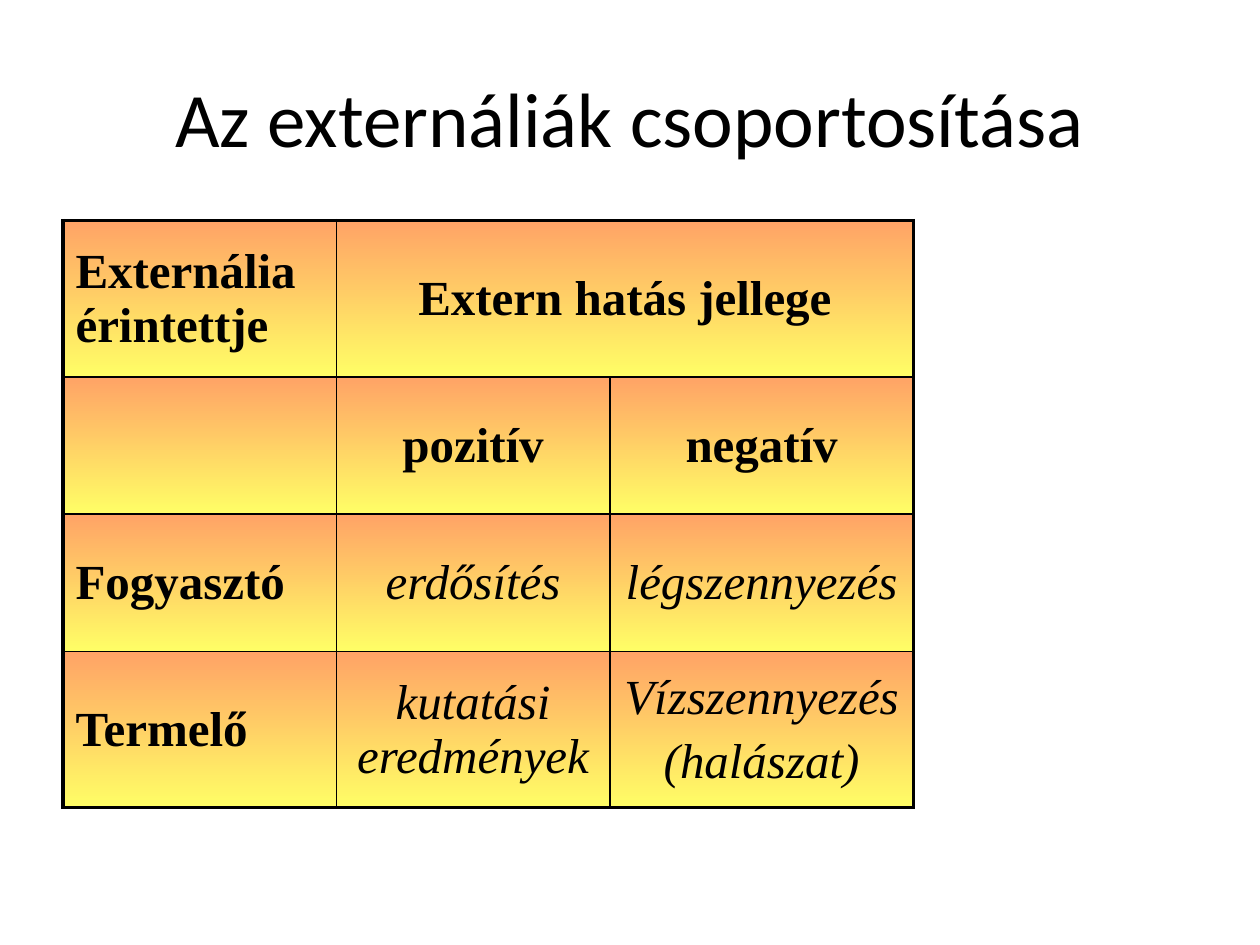
from lxml import etree
from pptx import Presentation
from pptx.dml.color import RGBColor
from pptx.enum import text
from pptx.oxml import ns
from pptx.util import Pt

TITLE = "Az externáliák csoportosítása"
ROWS = [
    ["Externália érintettje", "Extern hatás jellege", ""],
    ["", "pozitív", "negatív"],
    ["Fogyasztó", "erdősítés", "légszennyezés"],
    ["Termelő", "kutatási eredmények", "Vízszennyezés\n(halászat)"],
]
COL_WIDTHS = [156.24, 156.24, 173.52]
ROW_HEIGHTS = [89.3, 78.5, 78.5, 89.3]
COLORS = {"ink": "000000", "top": "FF6600", "bottom": "FFFF00"}
OUTER, INNER = 2.25, 1
OPACITY = 60


def add(parent, tag, **attrs):
    return etree.SubElement(parent, ns.qn(tag), {k: str(v) for k, v in attrs.items()})


def add_border(props, side, width):
    line = add(props, f"a:ln{side}", w=Pt(width))
    add(add(line, "a:solidFill"), "a:srgbClr", val=COLORS["ink"])


def add_gradient(props):
    grad = add(props, "a:gradFill", rotWithShape=0)
    stops = add(grad, "a:gsLst")
    for pos, name in ((0, "top"), (100, "bottom")):
        stop = add(stops, "a:gs", pos=pos * 1000)
        color = add(stop, "a:srgbClr", val=COLORS[name])
        add(color, "a:alpha", val=OPACITY * 1000)
    add(grad, "a:lin", ang=90 * 60000, scaled=1)


def set_font(p, name, size, bold=False, italic=False):
    p.font.name = name
    p.font.size = Pt(size)
    p.font.bold = bold
    p.font.italic = italic
    p.font.color.rgb = RGBColor.from_string(COLORS["ink"])


def fill_cell(cell, words, row, col):
    cell.vertical_anchor = text.MSO_ANCHOR.MIDDLE
    cell.text = words
    example = row > 1 and col > 0
    for i, p in enumerate(cell.text_frame.paragraphs):
        p.alignment = text.PP_ALIGN.CENTER if col else text.PP_ALIGN.LEFT
        if i:
            p.space_before = Pt(5.6)
        set_font(p, "Times New Roman", 28, bold=not example, italic=example)

    props = cell._tc.get_or_add_tcPr()
    last_col = col + cell.span_width if cell.is_merge_origin else col + 1
    edges = {"L": col == 0, "R": last_col == len(COL_WIDTHS),
             "T": row == 0, "B": row == len(ROWS) - 1}
    for side, outside in edges.items():
        add_border(props, side, OUTER if outside else INNER)
    add_gradient(props)


def main():
    prs = Presentation()
    prs.slide_width, prs.slide_height = Pt(720), Pt(540)
    s = prs.slides.add_slide(prs.slide_layouts[5])

    title = s.shapes.title
    title.left, title.top, title.width, title.height = Pt(36), Pt(21.6), Pt(648), Pt(90)
    tf = title.text_frame
    tf.text = TITLE
    tf.vertical_anchor = text.MSO_ANCHOR.MIDDLE
    tf.paragraphs[0].alignment = text.PP_ALIGN.CENTER
    set_font(tf.paragraphs[0], "Calibri", 44)

    table = s.shapes.add_table(len(ROWS), len(COL_WIDTHS), Pt(36), Pt(126),
                               Pt(sum(COL_WIDTHS)), Pt(sum(ROW_HEIGHTS))).table
    table.first_row = table.horz_banding = False
    for column, width in zip(table.columns, COL_WIDTHS):
        column.width = Pt(width)
    for row, height in zip(table.rows, ROW_HEIGHTS):
        row.height = Pt(height)
    table.cell(0, 1).merge(table.cell(0, 2))
    for i, row in enumerate(ROWS):
        for j, words in enumerate(row):
            fill_cell(table.cell(i, j), words, i, j)

    prs.save("out.pptx")


if __name__ == "__main__":
    main()
